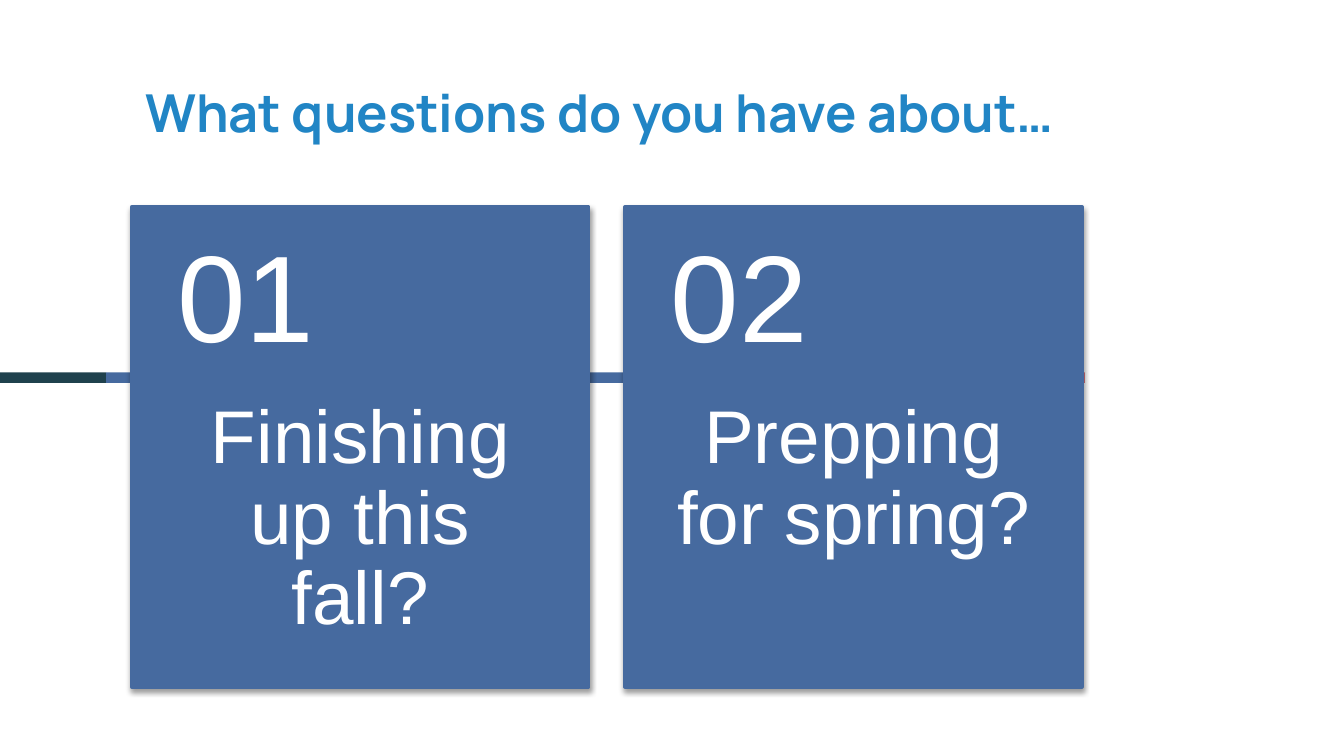
from lxml import etree
from pptx import Presentation
from pptx.dml.color import RGBColor
from pptx.enum import shapes, text
from pptx.oxml.ns import qn
from pptx.util import Inches, Pt

TITLE = "What questions do you have about…"
CARDS = [
    ("01", "Finishing up this fall?"),
    ("02", "Prepping for spring?"),
]
THEME = {
    "blue": "466A9F", "dark": "1F414D", "red": "CC2E40",
    "title": "2185C5", "white": "FFFFFF", "shadow": "000000",
    "title_font": "Manrope", "card_font": "Arial",
    "title_size": 28, "number_size": 66, "question_size": 40,
}
SLIDE_WIDTH = 10
SLIDE_HEIGHT = SLIDE_WIDTH * 9 / 16
# left, width, colour
BARS = [(7.28, 0.79, "red"), (0, 0.79, "dark"), (0.79, 5.71, "blue")]
BAR_TOP, BAR_HEIGHT = 2.77, 0.08
CARD_LEFT, CARD_TOP, CARD_WIDTH, CARD_HEIGHT, CARD_GAP = 0.98, 1.54, 3.4, 3.57, 0.27
NUMBER_HEIGHT = 1.43


def color(name):
    return RGBColor.from_string(THEME[name])


def add_rectangle(slide, left, top, width, height, fill, line_width=0):
    shape = slide.shapes.add_shape(
        shapes.MSO_SHAPE.RECTANGLE, *map(Inches, (left, top, width, height)))
    shape.shadow.inherit = False
    shape.fill.solid()
    shape.fill.fore_color.rgb = color(fill)
    if line_width:
        shape.line.color.rgb = color(fill)
        shape.line.width = Pt(line_width)
    else:
        shape.line.fill.background()
    return shape


def add_soft_shadow(shape):
    effects = shape._element.spPr.find(qn("a:effectLst"))
    shadow = etree.SubElement(
        effects, qn("a:outerShdw"), blurRad=str(Pt(3.1)), dist=str(Pt(1.6)),
        dir=str(90 * 60000), algn="ctr", rotWithShape="0")
    shade = etree.SubElement(shadow, qn("a:srgbClr"), val=THEME["shadow"])
    etree.SubElement(shade, qn("a:alpha"), val="38000")


def write(shape, content, *, size, font, fill, bold=False,
          align=text.PP_ALIGN.LEFT, anchor=text.MSO_ANCHOR.TOP, insets):
    """Fill a shape with one paragraph; insets are left, top, right, bottom."""
    frame = shape.text_frame
    frame.word_wrap = True
    frame.auto_size = text.MSO_AUTO_SIZE.NONE
    frame.vertical_anchor = anchor
    (frame.margin_left, frame.margin_top,
     frame.margin_right, frame.margin_bottom) = map(Inches, insets)
    paragraph = frame.paragraphs[0]
    paragraph.alignment = align
    paragraph.line_spacing = 0.9
    run = paragraph.add_run()
    run.text = content
    run.font.size = Pt(THEME[size])
    run.font.name = THEME[font]
    run.font.bold = bold
    run.font.color.rgb = color(fill)


def add_card(slide, left, number, question):
    card = add_rectangle(slide, left, CARD_TOP, CARD_WIDTH, CARD_HEIGHT, "blue", 2)
    add_soft_shadow(card)
    question_box = slide.shapes.add_textbox(
        Inches(left), Inches(CARD_TOP + NUMBER_HEIGHT),
        Inches(CARD_WIDTH), Inches(CARD_HEIGHT - NUMBER_HEIGHT))
    write(question_box, question, size="question_size", font="card_font",
          fill="white", align=text.PP_ALIGN.CENTER, insets=(0.34, 0, 0.34, 0.36))
    number_box = slide.shapes.add_textbox(
        Inches(left), Inches(CARD_TOP), Inches(CARD_WIDTH), Inches(NUMBER_HEIGHT))
    write(number_box, number, size="number_size", font="card_font",
          fill="white", anchor=text.MSO_ANCHOR.MIDDLE,
          insets=(0.34, 0.18, 0.34, 0.18))


def main():
    presentation = Presentation()
    presentation.slide_width = Inches(SLIDE_WIDTH)
    presentation.slide_height = Inches(SLIDE_HEIGHT)
    slide = presentation.slides.add_slide(
        presentation.slide_layouts.get_by_name("Title Only"))

    title = slide.shapes.title
    title.left, title.top, title.width, title.height = map(
        Inches, (CARD_LEFT, 0.39, 7.07, 0.94))
    write(title, TITLE, size="title_size", font="title_font", fill="title",
          bold=True, anchor=text.MSO_ANCHOR.MIDDLE, insets=(0.1,) * 4)

    for left, width, fill in BARS:
        add_rectangle(slide, left, BAR_TOP, width, BAR_HEIGHT, fill)
    for index, (number, question) in enumerate(CARDS):
        add_card(slide, CARD_LEFT + index * (CARD_WIDTH + CARD_GAP), number, question)

    presentation.save("out.pptx")


if __name__ == "__main__":
    main()
